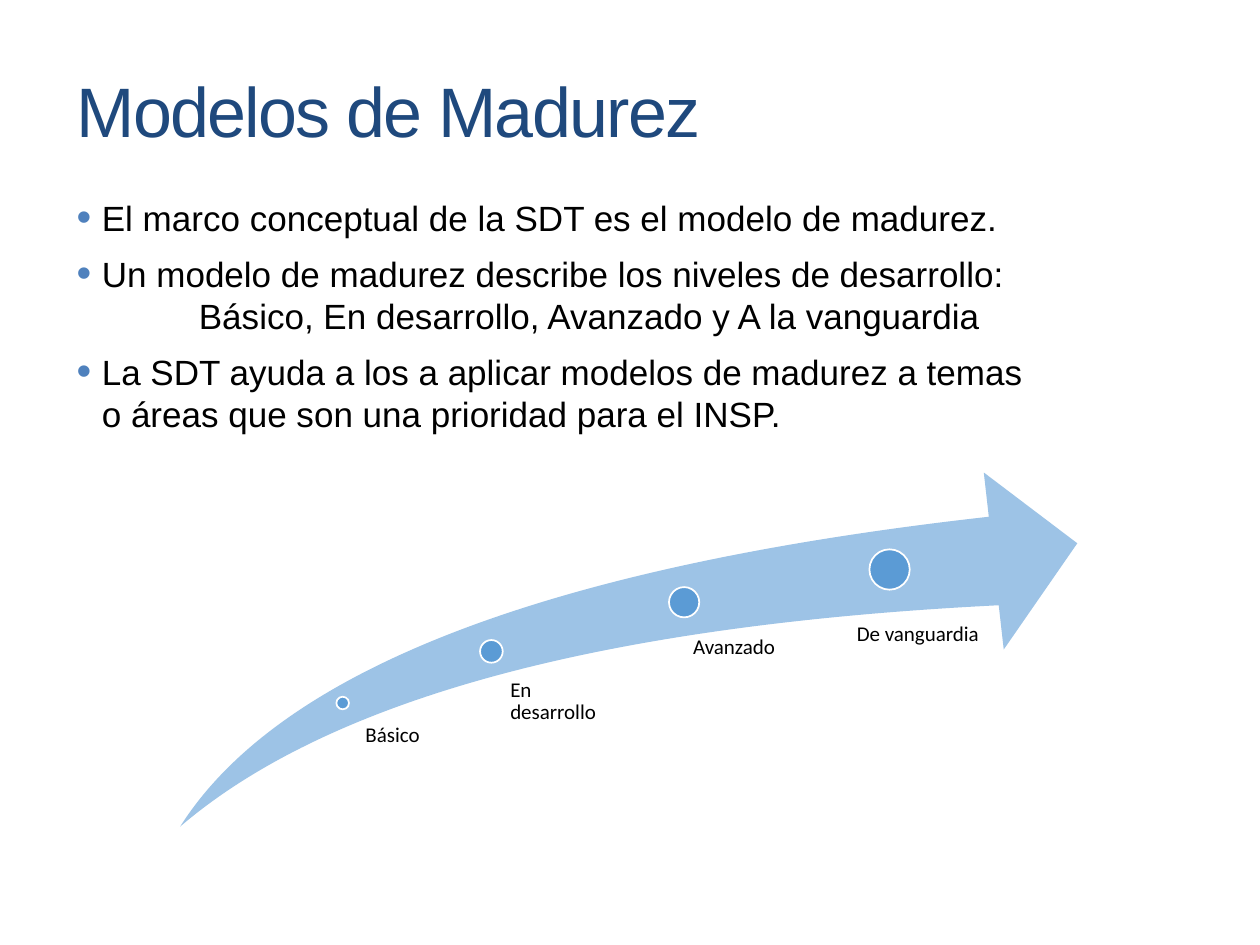
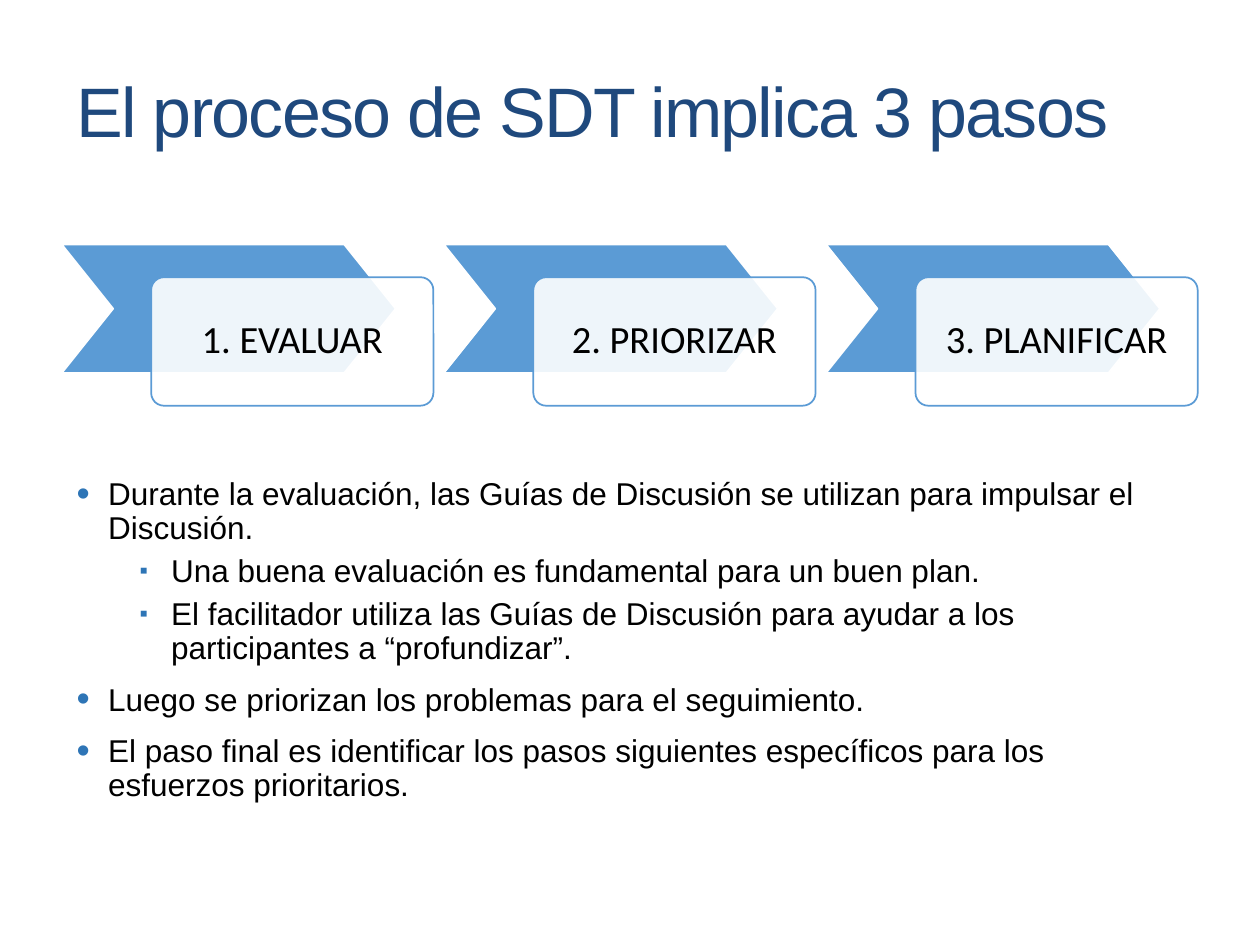
from dataclasses import dataclass
from typing import Optional

from lxml import etree
from pptx import Presentation
from pptx.dml.color import RGBColor
from pptx.enum.shapes import MSO_SHAPE
from pptx.enum.text import MSO_ANCHOR, PP_ALIGN
from pptx.oxml.ns import qn
from pptx.util import Inches, Pt

SWOOSH = MSO_SHAPE.SWOOSH_ARROW
ELLIPSE = MSO_SHAPE.OVAL
CHEVRON = MSO_SHAPE.CHEVRON
ROUNDED = MSO_SHAPE.ROUNDED_RECTANGLE
TOP, MIDDLE = MSO_ANCHOR.TOP, MSO_ANCHOR.MIDDLE
LEFT, CENTER = PP_ALIGN.LEFT, PP_ALIGN.CENTER
COLUMNS, ROWS = 100, 75


@dataclass(frozen=True)
class Theme:
    """Colours, fonts and type sizes of the deck."""
    title: str = "1F497D"
    text: str = "000000"
    white: str = "FFFFFF"
    accent: str = "5B9BD5"
    pale: str = "9DC3E6"
    model_bullet: str = "4F81BD"
    process_bullet: str = "2E75B6"
    heading_font: str = "Arial"
    diagram_font: str = "Calibri"
    title_size: int = 40
    model_size: int = 20
    process_size: int = 18
    step_size: int = 22
    label_size: int = 12


@dataclass(frozen=True)
class Area:
    """A rectangle in columns and rows of the slide grid."""
    column: float
    row: float
    width: float
    height: float


@dataclass(frozen=True)
class Level:
    """Indent, spacing and bullet of a paragraph; lengths in inches and points."""
    margin: float
    hanging: float = 0
    before: float = 0
    after: float = 0
    line: float = 1
    bullet: str = ""
    bullet_color: str = ""
    bullet_percent: int = 100
    depth: int = 0


@dataclass(frozen=True)
class Item:
    """One paragraph of a body text."""
    text: str
    level: Level


@dataclass(frozen=True)
class Stage:
    """A maturity stage: its dot on the arrow and its label."""
    name: str
    dot_column: float
    dot_row: float
    diameter: float
    label: Area


THEME = Theme()
TITLE_AREA = Area(5.1, 3.3, 90, 10.8)

MODEL = Level(0.2, 0.2, 6, 2, bullet="•", bullet_color=THEME.model_bullet, bullet_percent=120)
MODEL_LEAD = Level(0.2, 0.2, 6, 0, bullet="•", bullet_color=THEME.model_bullet, bullet_percent=120)
MODEL_CONTINUED = Level(0.97, after=2)
PROCESS = Level(0.25, 0.25, 10, line=0.9, bullet="•",
                bullet_color=THEME.process_bullet, bullet_percent=120)
PROCESS_DETAIL = Level(0.75, 0.25, 5, line=0.9, bullet="▪",
                       bullet_color=THEME.process_bullet, bullet_percent=75, depth=1)

MODEL_ITEMS = [
    Item("El marco conceptual de la SDT es el modelo de madurez.", MODEL),
    Item("Un modelo de madurez describe los niveles de desarrollo:", MODEL_LEAD),
    Item("Básico, En desarrollo, Avanzado y A la vanguardia", MODEL_CONTINUED),
    Item("La SDT ayuda a los a aplicar modelos de madurez a temas\n"
         "o áreas que son una prioridad para el INSP.", MODEL),
]
PROCESS_ITEMS = [
    Item("Durante la evaluación, las Guías de Discusión se utilizan para impulsar el Discusión.",
         PROCESS),
    Item("Una buena evaluación es fundamental para un buen plan.", PROCESS_DETAIL),
    Item("El facilitador utiliza las Guías de Discusión para ayudar a los participantes "
         "a “profundizar”.", PROCESS_DETAIL),
    Item("Luego se priorizan los problemas para el seguimiento.", PROCESS),
    Item("El paso final es identificar los pasos siguientes específicos para los esfuerzos "
         "prioritarios.", PROCESS),
]
STAGES = [
    Stage("Básico", 26.7, 55.3, 1, Area(29, 57.5, 7.2, 6.7)),
    Stage("En desarrollo", 38.1, 50.8, 1.8, Area(40.5, 53.9, 8.4, 3.7)),
    Stage("Avanzado", 53.1, 46.6, 2.4, Area(55, 50.5, 7.5, 3.9)),
    Stage("De vanguardia", 69, 43.6, 3.2, Area(68, 49.5, 11.7, 2.5)),
]
STEPS = ["1. EVALUAR", "2. PRIORIZAR", "3. PLANIFICAR"]
STEP_PITCH = 30.33


def place(deck, area: Area) -> tuple:
    """Turn a grid area into left, top, width and height."""
    column, row = deck.slide_width / COLUMNS, deck.slide_height / ROWS
    return (int(area.column * column), int(area.row * row),
            int(area.width * column), int(area.height * row))


def style_font(paragraph, name: str, size: float, color: str) -> None:
    """Set the font of a whole paragraph."""
    paragraph.font.name = name
    paragraph.font.size = Pt(size)
    paragraph.font.color.rgb = RGBColor.from_string(color)


def set_frame(box, anchor, inset: Optional[float] = None):
    """Prepare a wrapping text frame and return it."""
    frame = box.text_frame
    frame.word_wrap = True
    frame.vertical_anchor = anchor
    if inset is not None:
        frame.margin_left = frame.margin_right = Inches(inset)
        frame.margin_top = frame.margin_bottom = Inches(inset)
    return frame


def add_figure(deck, page, kind, area: Area, fill: str, line: Optional[str] = None,
               adjustments: tuple = (), opacity: int = 100):
    """Draw a filled preset shape with an optional outline."""
    figure = page.shapes.add_shape(kind, *place(deck, area))
    figure.shadow.inherit = False
    for index, value in enumerate(adjustments):
        figure.adjustments[index] = value
    figure.fill.solid()
    figure.fill.fore_color.rgb = RGBColor.from_string(fill)
    if opacity < 100:
        color = figure.element.spPr.find(qn("a:solidFill")).find(qn("a:srgbClr"))
        etree.SubElement(color, qn("a:alpha"), val=str(opacity * 1000))
    if line:
        figure.line.color.rgb = RGBColor.from_string(line)
        figure.line.width = Pt(1)
    else:
        figure.line.fill.background()
    return figure


def add_caption(box, text: str, size: float, anchor, alignment, inset: float) -> None:
    """Write one diagram paragraph into a box."""
    paragraph = set_frame(box, anchor, inset).paragraphs[0]
    paragraph.text = text
    paragraph.alignment = alignment
    paragraph.line_spacing = 0.9
    style_font(paragraph, THEME.diagram_font, size, THEME.text)


def add_title(deck, page, text: str) -> None:
    """Write the slide title with tightened letters."""
    box = page.shapes.add_textbox(*place(deck, TITLE_AREA))
    paragraph = set_frame(box, MIDDLE).paragraphs[0]
    paragraph.text = text
    style_font(paragraph, THEME.heading_font, THEME.title_size, THEME.title)
    for span in paragraph.runs:
        span._r.get_or_add_rPr().set("spc", "-100")


def apply_level(paragraph, level: Level, first: bool) -> None:
    """Give a paragraph its indent, spacing and bullet."""
    paragraph.level = level.depth
    paragraph.line_spacing = level.line
    paragraph.space_before = Pt(0 if first else level.before)
    paragraph.space_after = Pt(level.after)
    properties = paragraph._p.get_or_add_pPr()
    properties.set("marL", str(Inches(level.margin)))
    properties.set("indent", str(-Inches(level.hanging)))
    if not level.bullet:
        etree.SubElement(properties, qn("a:buNone"))
        return
    color = etree.SubElement(properties, qn("a:buClr"))
    etree.SubElement(color, qn("a:srgbClr"), val=level.bullet_color)
    etree.SubElement(properties, qn("a:buSzPct"), val=str(level.bullet_percent * 1000))
    etree.SubElement(properties, qn("a:buFont"), typeface=THEME.heading_font)
    etree.SubElement(properties, qn("a:buChar"), char=level.bullet)


def add_body(deck, page, area: Area, items: list[Item], size: float) -> None:
    """Write a list of paragraphs."""
    frame = set_frame(page.shapes.add_textbox(*place(deck, area)), TOP)
    for index, item in enumerate(items):
        paragraph = frame.add_paragraph() if index else frame.paragraphs[0]
        paragraph.text = item.text
        apply_level(paragraph, item.level, index == 0)
        style_font(paragraph, THEME.heading_font, size, THEME.text)


def add_stage(deck, page, stage: Stage) -> None:
    """Draw the dot and label of a maturity stage."""
    dot = Area(stage.dot_column, stage.dot_row, stage.diameter, stage.diameter)
    add_figure(deck, page, ELLIPSE, dot, THEME.accent, THEME.white)
    box = page.shapes.add_textbox(*place(deck, stage.label))
    add_caption(box, stage.name, THEME.label_size, TOP, LEFT, 0)


def add_step(deck, page, index: int, name: str) -> None:
    """Draw a chevron with its overlapping name card."""
    shift = index * STEP_PITCH
    add_figure(deck, page, CHEVRON, Area(4.9 + shift, 19.4, 26.5, 10.2),
               THEME.accent, THEME.white, (0.4,))
    card = add_figure(deck, page, ROUNDED, Area(12 + shift, 22, 22.4, 10.2),
                      THEME.white, THEME.accent, (0.1,), opacity=90)
    add_caption(card, name, THEME.step_size, MIDDLE, CENTER, 0.17)


def add_page(deck, title: str):
    """Add a blank page with a title."""
    page = deck.slides.add_slide(deck.slide_layouts[6])
    add_title(deck, page, title)
    return page


def build_models(deck) -> None:
    """Build the page on maturity models."""
    page = add_page(deck, "Modelos de Madurez")
    add_figure(deck, page, SWOOSH, Area(14.3, 37.5, 71.2, 28.1), THEME.pale,
               adjustments=(0.25, 0.25))
    for stage in STAGES:
        add_stage(deck, page, stage)
    add_body(deck, page, Area(5.1, 15.1, 84.9, 26), MODEL_ITEMS, THEME.model_size)


def build_process(deck) -> None:
    """Build the page on the three steps."""
    page = add_page(deck, "El proceso de SDT implica 3 pasos")
    add_body(deck, page, Area(5.1, 37.5, 88.3, 27), PROCESS_ITEMS, THEME.process_size)
    for index, name in enumerate(STEPS):
        add_step(deck, page, index, name)


def main() -> None:
    """Build and save the deck."""
    deck = Presentation()
    deck.slide_width, deck.slide_height = Inches(10), Inches(7.5)
    build_models(deck)
    build_process(deck)
    deck.save("out.pptx")


if __name__ == "__main__":
    main()
